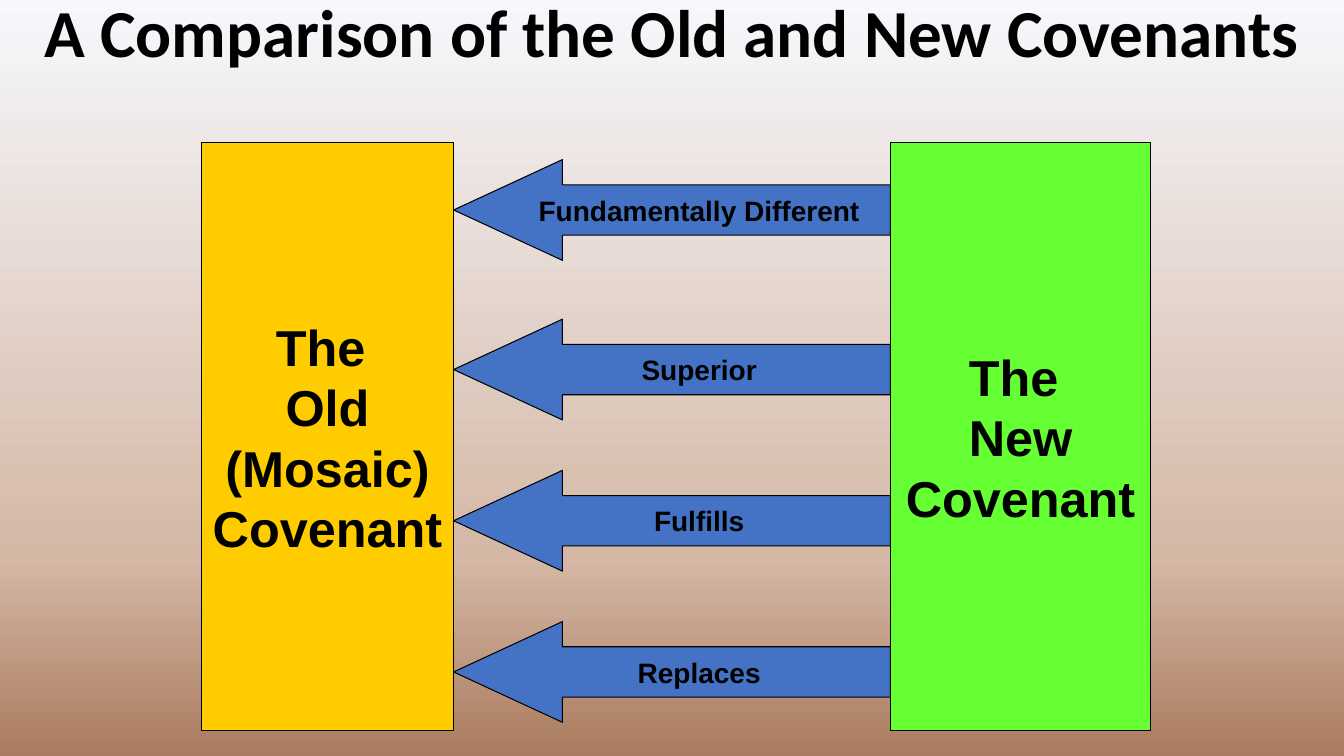
from copy import deepcopy
from dataclasses import dataclass

from pptx import Presentation
from pptx.dml.color import RGBColor
from pptx.enum.shapes import MSO_SHAPE
from pptx.enum.text import MSO_ANCHOR, MSO_AUTO_SIZE, PP_ALIGN
from pptx.oxml.ns import qn
from pptx.util import Pt

PX = 9525  # EMU per px, 96 px to the inch


@dataclass(frozen=True)
class Theme:
    ink: str = "000000"
    old: str = "FFCC00"
    new: str = "66FF33"
    arrow: str = "4472C4"
    backdrop: tuple = ((0, "F6F8FC"), (0.74, "D4B7A5"), (1, "AA7B5E"))
    title_font: str = "Calibri"
    body_font: str = "Arial"
    title_size: int = 48
    covenant_size: int = 36
    arrow_size: int = 20


THEME = Theme()


def px(*lengths):
    return [length * PX for length in lengths]


def paint_background(slide):
    fill = slide.background.fill
    fill.gradient()
    fill.gradient_angle = 270
    stop_list = slide.element.find(".//" + qn("a:gsLst"))
    stop_list.insert(1, deepcopy(stop_list[0]))
    for stop, (position, color) in zip(fill.gradient_stops, THEME.backdrop):
        stop.position = position
        stop.color.rgb = RGBColor.from_string(color)


def write(shape, lines, font_name, size):
    """Fill the shape with centred bold lines, one paragraph each."""
    frame = shape.text_frame
    frame.text = "\n".join(lines)
    frame.vertical_anchor = MSO_ANCHOR.MIDDLE
    for paragraph in frame.paragraphs:
        paragraph.alignment = PP_ALIGN.CENTER
        font = paragraph.font
        font.name, font.size, font.bold = font_name, Pt(size), True
        font.color.rgb = RGBColor.from_string(THEME.ink)


def add_title(slide, box, text):
    title = slide.shapes.title
    title.left, title.top, title.width, title.height = px(*box)
    title.text_frame.auto_size = MSO_AUTO_SIZE.NONE
    write(title, [text], THEME.title_font, THEME.title_size)
    title.text_frame.paragraphs[0].line_spacing = 0.9


def add_block(slide, kind, box, color, lines, size, wrap):
    shape = slide.shapes.add_shape(kind, *px(*box))
    shape.shadow.inherit = False
    shape.fill.solid()
    shape.fill.fore_color.rgb = RGBColor.from_string(color)
    shape.line.color.rgb = RGBColor.from_string(THEME.ink)
    shape.line.width = Pt(0.75)
    shape.text_frame.word_wrap = wrap
    write(shape, lines, THEME.body_font, size)
    return shape


def add_comparison(slide, box):
    """Place the two covenants at the sides of the box, with arrows from new to old."""
    left, top, width, height = box
    old_width, new_width, arrow_height = 240, 248, 96
    new_left = left + width - new_width
    covenants = [
        (left, old_width, THEME.old, ["The ", "Old", "(Mosaic) Covenant"]),
        (new_left, new_width, THEME.new, ["The ", "New Covenant"]),
    ]
    for block_left, block_width, color, lines in covenants:
        add_block(slide, MSO_SHAPE.RECTANGLE, (block_left, top, block_width, height),
                  color, lines, THEME.covenant_size, True)

    arrow_left = left + old_width
    arrows = [(16, "Fundamentally Different"), (168, "Superior"),
              (312, "Fulfills"), (456, "Replaces")]
    for offset, label in arrows:
        arrow_box = (arrow_left, top + offset, new_left - arrow_left, arrow_height)
        arrow = add_block(slide, MSO_SHAPE.LEFT_ARROW, arrow_box, THEME.arrow,
                          [label], THEME.arrow_size, False)
        arrow.adjustments[0] = 0.5
        arrow.adjustments[1] = 1.08


def main():
    presentation = Presentation()
    presentation.slide_width, presentation.slide_height = px(1280, 720)
    slide = presentation.slides.add_slide(presentation.slide_layouts[5])
    paint_background(slide)
    add_title(slide, (0, 0, 1280, 68), "A Comparison of the Old and New Covenants")
    add_comparison(slide, (192, 136, 904, 560))
    presentation.save("out.pptx")


if __name__ == "__main__":
    main()
